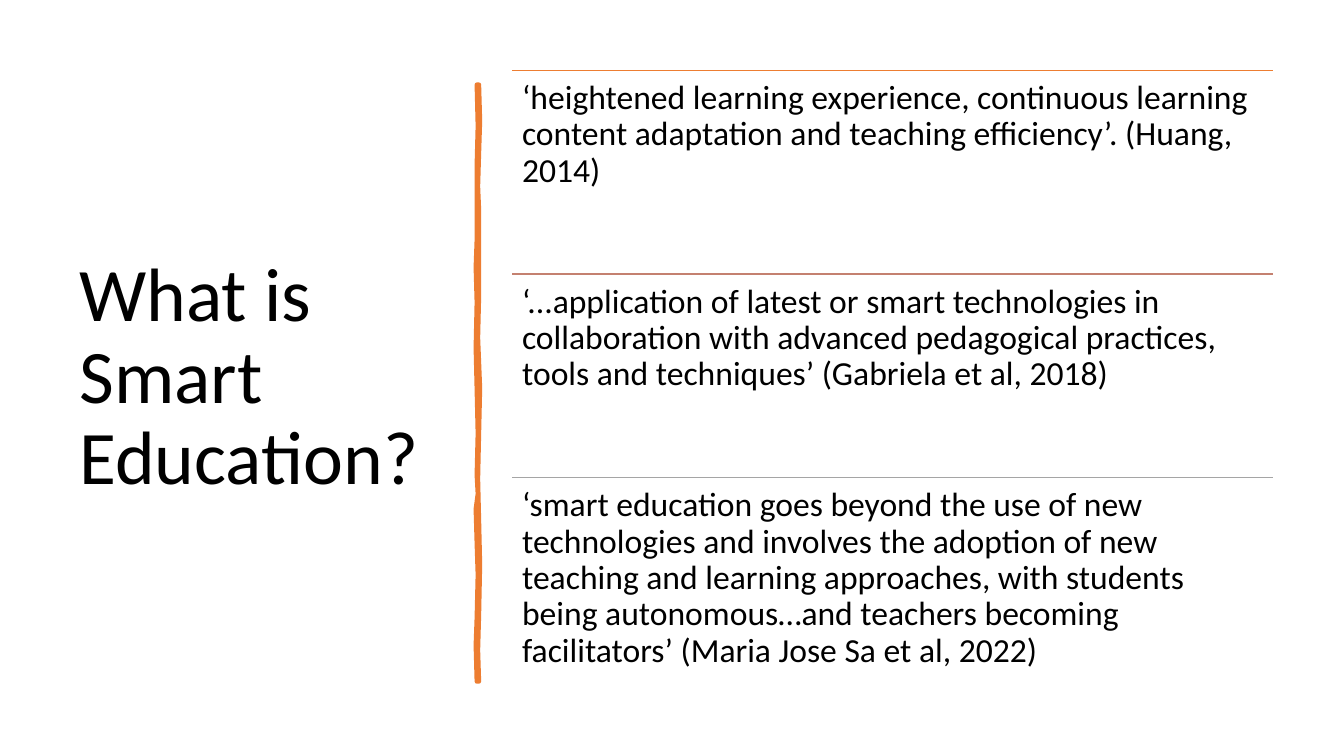
from lxml import etree
from pptx import Presentation
from pptx.dml.color import RGBColor
from pptx.enum.shapes import MSO_CONNECTOR
from pptx.enum.text import MSO_ANCHOR
from pptx.oxml.ns import qn
from pptx.util import Pt

PX = 9144  # 100 px to the inch
STRAIGHT = MSO_CONNECTOR.STRAIGHT
TOP, MIDDLE = MSO_ANCHOR.TOP, MSO_ANCHOR.MIDDLE
BLACK = RGBColor(0x00, 0x00, 0x00)
ORANGE = RGBColor(0xED, 0x7D, 0x31)
CLAY = RGBColor(0xC4, 0x81, 0x70)
GRAY = RGBColor(0xA5, 0xA5, 0xA5)

deck = Presentation()
deck.slide_width, deck.slide_height = 1333 * PX, 750 * PX
page = deck.slides.add_slide(deck.slide_layouts[6])


def add_text(left, top, width, height, text, size, anchor, inset_y):
    box = page.shapes.add_textbox(left * PX, top * PX, width * PX, height * PX)
    frame = box.text_frame
    frame.word_wrap = True
    frame.vertical_anchor = anchor
    frame.margin_left = frame.margin_right = 10 * PX
    frame.margin_top = frame.margin_bottom = inset_y * PX
    para = frame.paragraphs[0]
    para.text = text
    para.line_spacing = 0.9
    para.font.size = Pt(size)
    para.font.name = "Calibri"
    para.font.color.rgb = BLACK


# Title
add_text(69, 70, 374, 611, "What is Smart Education?", 54, MIDDLE, 5)

# Hand-drawn vertical divider: down the right edge, up the left edge
right_edge = [(475, 84), (476, 120), (475, 152), (474, 185), (475, 208),
              (475, 294), (474, 335), (476, 385), (475, 430), (474, 475),
              (475, 516), (476, 560), (475, 610), (474, 645), (475, 676)]
left_edge = [(473, 676), (472, 640), (473, 613), (474, 570), (473, 539),
             (472, 505), (474, 490), (473, 471), (474, 430), (473, 386),
             (472, 345), (473, 300), (472, 265), (473, 238), (473, 164),
             (474, 125), (473, 84)]
builder = page.shapes.build_freeform(*right_edge[0], scale=PX)
builder.add_line_segments(right_edge[1:] + left_edge, close=True)
divider = builder.convert_to_shape()
divider.shadow.inherit = False
divider.fill.solid()
divider.fill.fore_color.rgb = ORANGE
divider.line.color.rgb = ORANGE
divider.line.width = Pt(3.25)
etree.SubElement(divider.line._get_or_add_ln(), qn("a:round"))

# Definitions, each under its own rule
definitions = [
    (ORANGE, "‘heightened learning experience, continuous learning content "
             "adaptation and teaching efficiency’. (Huang, 2014)"),
    (CLAY, "‘...application of latest or smart technologies in collaboration "
           "with advanced pedagogical practices, tools and techniques’ "
           "(Gabriela et al, 2018)"),
    (GRAY, "‘smart education goes beyond the use of new technologies and "
           "involves the adoption of new teaching and learning approaches, "
           "with students being autonomous…and teachers becoming "
           "facilitators’ (Maria Jose Sa et al, 2022)"),
]
LEFT, FIRST_TOP, WIDTH, ROW = 508, 70, 755, 202
for index, (color, quote) in enumerate(definitions):
    top = FIRST_TOP + index * ROW
    rule = page.shapes.add_connector(
        STRAIGHT, LEFT * PX, top * PX, (LEFT + WIDTH) * PX, top * PX)
    rule.line.color.rgb = color
    rule.line.width = Pt(1)
    etree.SubElement(rule._element.spPr, qn("a:effectLst"))
    add_text(LEFT, top, WIDTH, ROW, quote, 24, TOP, 10)

deck.save("out.pptx")
